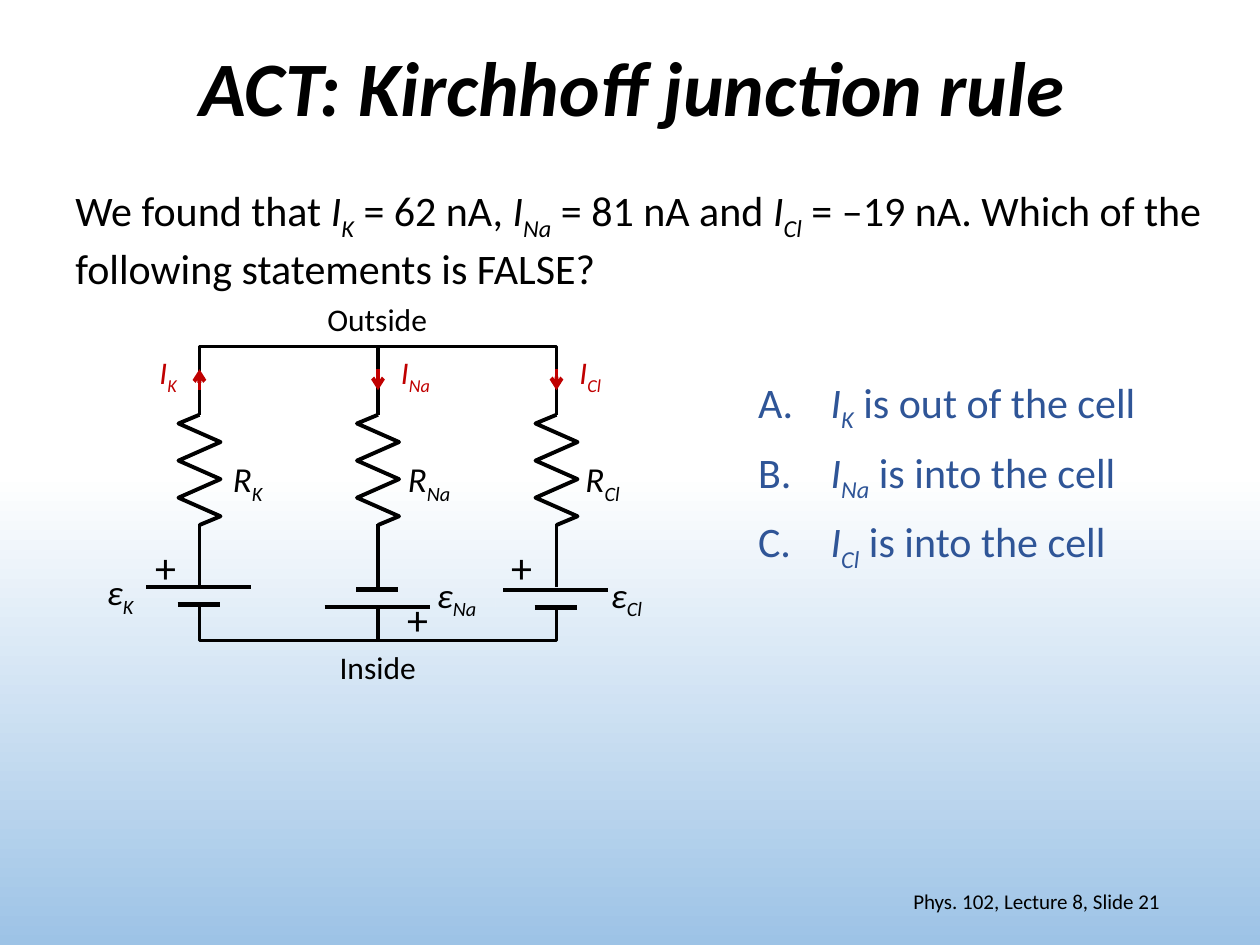
from lxml import etree
from pptx import Presentation
from pptx.dml.color import RGBColor
from pptx.enum.shapes import MSO_CONNECTOR, MSO_SHAPE
from pptx.enum.text import MSO_ANCHOR, MSO_AUTO_SIZE, PP_ALIGN
from pptx.oxml.ns import qn
from pptx.util import Pt

STRAIGHT, RECTANGLE = MSO_CONNECTOR.STRAIGHT, MSO_SHAPE.RECTANGLE
MIDDLE, TOP = MSO_ANCHOR.MIDDLE, MSO_ANCHOR.TOP
LEFT, CENTER, RIGHT = PP_ALIGN.LEFT, PP_ALIGN.CENTER, PP_ALIGN.RIGHT
NO_AUTOFIT = MSO_AUTO_SIZE.NONE

BLACK = RGBColor(0x00, 0x00, 0x00)
WHITE = RGBColor(0xFF, 0xFF, 0xFF)
SKY = RGBColor(0x9D, 0xC3, 0xE6)
BLUE = RGBColor(0x2F, 0x55, 0x97)
RED = RGBColor(0xC0, 0x00, 0x00)
FONT = "Calibri"
WIRE = 2.25

# Horizontal offsets are from the branch wire, battery offsets from the loop top
BRANCHES = [
    dict(ion="K", battery=137.5, plus_above=True, outward=True,
         current=(-30, 25), resistor=(12, 32.5), emf=(-60, 30), plus=-32.5),
    dict(ion="Na", battery=139, plus_above=False, outward=False,
         current=(6, 33), resistor=(10, 41), emf=(26.5, 39.5), plus=9.5),
    dict(ion="Cl", battery=139, plus_above=True, outward=False,
         current=(6, 28), resistor=(9.5, 36), emf=(24, 34), plus=-33),
]


def place(shape, box):
    shape.left, shape.top, shape.width, shape.height = (Pt(n) for n in box)


def write(para, marked, size, color=BLACK):
    """Pieces between bars cycle through plain text, italic symbol, subscript."""
    for index, piece in enumerate(marked.split("|")):
        if not piece:
            continue
        span = para.add_run()
        span.text = piece
        font = span.font
        font.name, font.size, font.color.rgb = FONT, Pt(size), color
        font.italic = index % 3 > 0
        if index % 3 == 2:
            font._element.set("baseline", "-25000")


def add_text(page, box, marked, size, color=BLACK, wrap=False, align=LEFT, anchor=TOP):
    label = page.shapes.add_textbox(*(Pt(n) for n in box))
    frame = label.text_frame
    frame.word_wrap, frame.vertical_anchor = wrap, anchor
    para = frame.paragraphs[0]
    para.alignment = align
    write(para, marked, size, color)


def add_line(page, start, end, color=BLACK, width=WIRE, arrow=False):
    line = page.shapes.add_connector(STRAIGHT, *(Pt(n) for n in (*start, *end)))
    line.line.color.rgb, line.line.width = color, Pt(width)
    if arrow:
        etree.SubElement(line.line._get_or_add_ln(), qn("a:tailEnd"), type="arrow")
    etree.SubElement(line._element.spPr, qn("a:effectLst"))


def add_mask(page, box):
    """Hide a stretch of wire behind the page background."""
    mask = page.shapes.add_shape(RECTANGLE, *(Pt(n) for n in box))
    mask.shadow.inherit = False
    mask.line.fill.background()
    mask._element.set("useBgFill", "1")


def paint_background(page):
    fill = page.background.fill
    fill.gradient()
    fill.gradient_angle = 270
    for stop, position, color in zip(fill.gradient_stops, (0.5, 1), (WHITE, SKY)):
        stop.position, stop.color.rgb = position, color


def add_title(page, box):
    title = page.shapes.title
    place(title, box)
    title.text_frame.text = "ACT: Kirchhoff junction rule"
    title.text_frame.vertical_anchor = MIDDLE
    title.text_frame.auto_size = NO_AUTOFIT
    para = title.text_frame.paragraphs[0]
    para.alignment, para.line_spacing = CENTER, 0.9
    font = para.runs[0].font
    font.name, font.size, font.color.rgb = FONT, Pt(44), BLACK
    font.bold = font.italic = True


def add_answers(page, box):
    body = page.placeholders[1]
    place(body, box)
    frame = body.text_frame
    frame.auto_size = NO_AUTOFIT
    answers = (" |I|K| is out of the cell", " |I|Na| is into the cell",
               " |I|Cl| is into the cell")
    for index, answer in enumerate(answers):
        para = frame.add_paragraph() if index else frame.paragraphs[0]
        para.space_before, para.space_after = Pt(0), Pt(7)
        write(para, answer, 24, BLUE)
        properties = para._p.get_or_add_pPr()
        properties.set("marL", str(Pt(36)))
        properties.set("indent", str(Pt(-36)))
        etree.SubElement(properties, qn("a:buFont"), typeface="+mj-lt")
        etree.SubElement(properties, qn("a:buAutoNum"), type="alphaUcPeriod")


def add_resistor(page, x, y):
    add_mask(page, (x - 12.5, y, 25, 62))
    points = [(x + (-12 if step % 2 else 12), y + 5 + 10.6 * step) for step in range(6)]
    points = [(x, y)] + points[::1] + [(x, y + 63)]
    # The first swing goes left
    points = [(2 * x - across, down) for across, down in points]
    outline = page.shapes.build_freeform(Pt(x), Pt(y))
    outline.add_line_segments([(Pt(a), Pt(b)) for a, b in points[1:]], close=False)
    zigzag = outline.convert_to_shape()
    zigzag.shadow.inherit = False
    zigzag.fill.background()
    zigzag.line.color.rgb, zigzag.line.width = BLACK, Pt(WIRE)


def add_battery(page, x, y, plus_above):
    add_mask(page, (x - 35, y - 1, 71, 12))
    long_y, short_y = (y, y + 10) if plus_above else (y + 10, y)
    add_line(page, (x - 30.5, long_y), (x + 29.5, long_y))
    add_line(page, (x - 12.5, short_y), (x + 11.5, short_y), width=3)


def add_branch(page, x, top, branch):
    ion, battery = branch["ion"], branch["battery"]
    add_resistor(page, x, top + 39)
    add_battery(page, x, top + battery, branch["plus_above"])

    # Current arrow
    ends = [(x, top + 13), (x, top + 25)]
    if branch["outward"]:
        ends.reverse()
    add_line(page, *ends, color=RED, arrow=True)

    # Labels
    for symbol, key, down, size, color in (("I", "current", 0, 18, RED),
                                           ("R", "resistor", 60, 20, BLACK),
                                           ("ε", "emf", battery - 13, 20, BLACK)):
        offset, width = branch[key]
        add_text(page, (x + offset, top + down, width, 31), f"|{symbol}|{ion}", size, color)
    plus_y = top + (108 if branch["plus_above"] else 137.5)
    add_text(page, (x + branch["plus"], plus_y, 26.5, 36), "+", 24)


def add_circuit(page, box):
    left, top, width, height = box
    middle = left + width / 2

    # Wires
    add_line(page, (middle, top), (middle, top + height))
    loop = page.shapes.add_shape(RECTANGLE, *(Pt(n) for n in box))
    loop.shadow.inherit = False
    loop.fill.background()
    loop.line.color.rgb, loop.line.width = BLACK, Pt(WIRE)

    for index, branch in enumerate(BRANCHES):
        add_branch(page, left + index * width / 2, top, branch)

    # Sides of the membrane
    add_text(page, (middle - 36, top - 30, 72, 29), "Outside", 18)
    add_text(page, (middle - 29, top + height + 1, 58, 29), "Inside", 18)


def main():
    deck = Presentation()
    deck.slide_width, deck.slide_height = Pt(720), Pt(540)
    page = deck.slides.add_slide(deck.slide_layouts[1])
    paint_background(page)
    add_title(page, (51, 0, 621, 104.5))
    add_text(page, (36, 102, 660, 65.5),
             "We found that |I|K| = 62 nA, |I|Na| = 81 nA and |I|Cl"
             "| = –19 nA. Which of the following statements is FALSE?", 24, wrap=True)
    add_answers(page, (426, 211.5, 282, 109))
    add_circuit(page, (114, 198, 204, 168))
    add_text(page, (508, 500.5, 162, 29), "Phys. 102, Lecture 8, Slide 21", 12,
             wrap=True, align=RIGHT, anchor=MIDDLE)
    deck.save("out.pptx")


if __name__ == "__main__":
    main()
